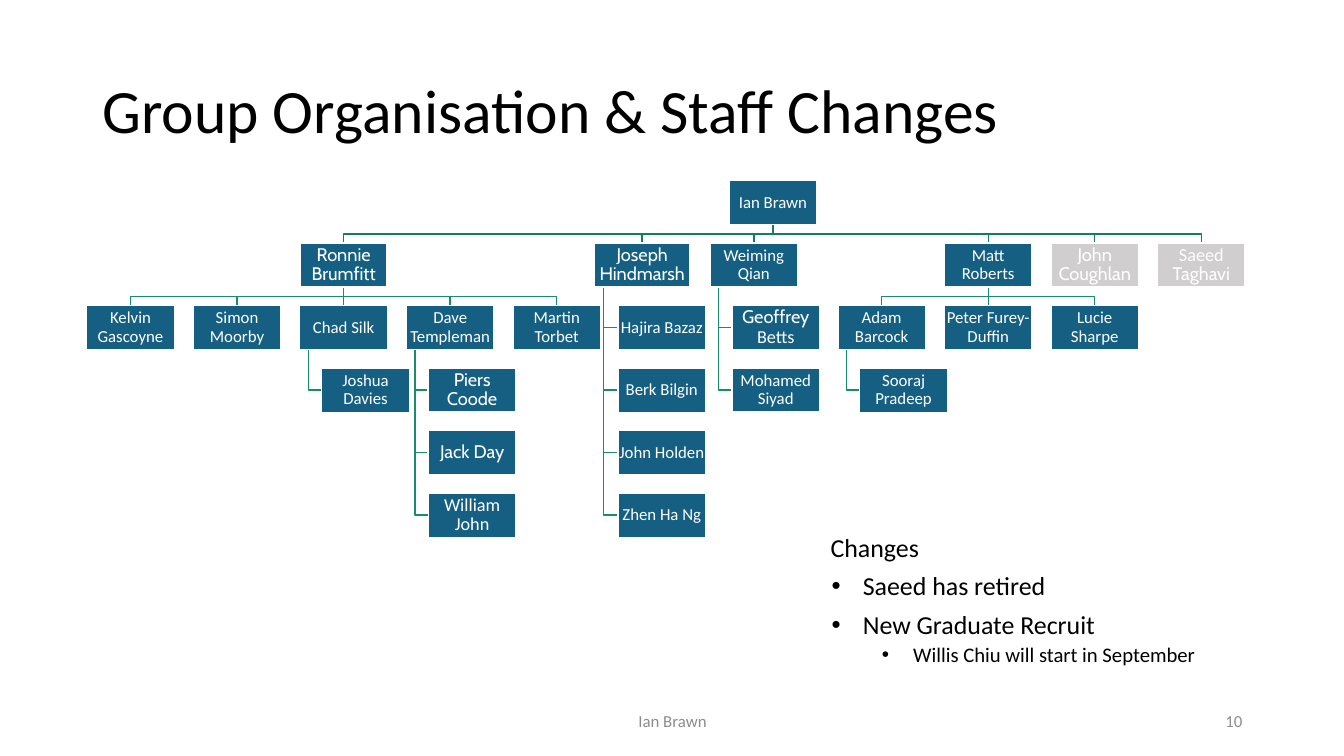
from dataclasses import dataclass, field
from typing import Iterator

from lxml.etree import SubElement
from pptx import Presentation
from pptx.dml.color import RGBColor as Rgb
from pptx.enum.shapes import MSO_CONNECTOR as Connector, MSO_SHAPE as Shape
from pptx.enum.text import MSO_ANCHOR as Anchor, PP_ALIGN as Align
from pptx.oxml.ns import qn
from pptx.util import Inches, Pt


@dataclass(frozen=True)
class Theme:
    main_face: str = "Calibri"
    accent_face: str = "Cabin"
    ink: str = "000000"
    muted: str = "8C8C8C"
    white: str = "FFFFFF"
    staff: str = "156082"
    leaver: str = "D0CECE"
    top_link: str = "177B60"
    team_link: str = "1A8C6D"
    title: float = 44
    name: float = 12
    large_name: float = 13
    change: float = 18.5
    detail: float = 14.8
    footer: float = 12
    link_width: float = 1
    thin: float = 1
    thick: float = 1.5


THEME = Theme()
SLIDE_W, SLIDE_H = 13.33, 7.5

# Chart grid: leftmost and rightmost boxes fix the column pitch
LEFT, TOP = 0.86, 1.79
COLUMN = (11.48 - LEFT) / 10.05
ROW = 0.62
BOX_W, BOX_H = 0.87, 0.44
SPINE, INDENT = 0.1, 0.25  # shares of the manager's box width


@dataclass
class Person:
    name: str
    column: float = 0
    reports: list["Person"] = field(default_factory=list)
    hanging: bool = False
    accent: str = ""  # part of the name in the accent face
    size: float = THEME.name
    edge: float = THEME.thin
    fill: str = THEME.staff
    width: float = 1  # in box widths
    row: int = 0

    @property
    def left(self) -> float:
        return LEFT + self.column * COLUMN

    @property
    def box_width(self) -> float:
        return self.width * BOX_W

    @property
    def centre(self) -> float:
        return self.left + self.box_width / 2

    @property
    def top(self) -> float:
        return TOP + self.row * ROW

    def place_reports(self) -> None:
        for step, report in enumerate(self.reports):
            report.row = self.row + 1 + (step if self.hanging else 0)
            if self.hanging:
                report.column = self.column + INDENT * self.box_width / COLUMN
            report.place_reports()

    def everyone(self) -> Iterator["Person"]:
        yield self
        for report in self.reports:
            yield from report.everyone()


@dataclass(frozen=True)
class Area:
    """Left, top, width and height in percent of the slide."""
    left: float
    top: float
    width: float
    height: float


@dataclass(frozen=True)
class Label:
    text: str
    area: Area
    size: float
    colour: str
    align: Align
    spacing: float = 1


@dataclass(frozen=True)
class Change:
    text: str
    margin: float
    size: float = THEME.change
    before: float = 10
    level: int = 0
    bullet: bool = True


def accented(name: str, accent: str = "", **options) -> Person:
    return Person(name, accent=accent or name, size=THEME.large_name,
                  edge=THEME.thick, **options)


CHIEF = Person("Ian Brawn", 6.03, [
    accented("Ronnie Brumfitt", column=2, reports=[
        Person("Kelvin Gascoyne", 0),
        Person("Simon Moorby", 1),
        Person("Chad Silk", 2, [Person("Joshua Davies")], hanging=True),
        Person("Dave Templeman", 3, [
            accented("Piers Coode"),
            accented("Jack Day"),
            Person("William John", size=THEME.large_name),
        ], hanging=True),
        Person("Martin Torbet", 4),
    ]),
    accented("Joseph Hindmarsh", column=4.76, width=1.1, hanging=True, reports=[
        Person("Hajira Bazaz"), Person("Berk Bilgin"),
        Person("John Holden"), Person("Zhen Ha Ng"),
    ]),
    Person("Weiming Qian", 5.85, [
        accented("Geoffrey Betts", "Geoffrey"),
        Person("Mohamed Siyad", edge=THEME.thick),
    ], hanging=True, edge=THEME.thick),
    Person("Matt Roberts", 8.05, [
        Person("Adam Barcock", 7.05, [Person("Sooraj Pradeep")], hanging=True),
        Person("Peter Furey-Duffin", 8.05),
        Person("Lucie Sharpe", 9.05),
    ], edge=THEME.thick),
    accented("John Coughlan", column=9.05, fill=THEME.leaver),
    accented("Saeed Taghavi", "Taghavi", column=10.05, fill=THEME.leaver),
])

LABELS = [
    Label("Group Organisation & Staff Changes", Area(6.9, 5.33, 86.27, 19.33),
          THEME.title, THEME.ink, Align.LEFT, 0.9),
    Label("Ian Brawn", Area(33.16, 92.67, 33.76, 5.33),
          THEME.footer, THEME.muted, Align.CENTER),
    Label("10", Area(70.67, 92.67, 22.51, 5.33),
          THEME.footer, THEME.muted, Align.RIGHT),
]

CHANGES_AREA = Area(60.46, 70.4, 39.53, 19.07)
CHANGES = [
    Change("Changes", 0.08, before=0, bullet=False),
    Change("Saeed has retired", 0.4),
    Change("New Graduate Recruit", 0.4),
    Change("Willis Chiu will start in September", 0.9, THEME.detail, 5, level=1),
]


def style(run, size: float, colour: str, face: str = THEME.main_face) -> None:
    run.font.size, run.font.name = Pt(size), face
    run.font.color.rgb = Rgb.from_string(colour)


def add_frame(slide, area: Area):
    frame = slide.shapes.add_textbox(
        Inches(area.left * SLIDE_W / 100), Inches(area.top * SLIDE_H / 100),
        Inches(area.width * SLIDE_W / 100), Inches(area.height * SLIDE_H / 100)).text_frame
    frame.word_wrap = True
    return frame


def draw_label(slide, label: Label) -> None:
    frame = add_frame(slide, label.area)
    frame.text, frame.vertical_anchor = label.text, Anchor.MIDDLE
    line = frame.paragraphs[0]
    line.alignment, line.line_spacing = label.align, label.spacing
    style(line.runs[0], label.size, label.colour)


def draw_link(slide, manager: Person, report: Person) -> None:
    start = manager.top + BOX_H
    if manager.hanging:
        spine = manager.left + SPINE * manager.box_width
        level = report.top + BOX_H / 2
        route = [(spine, start), (spine, level), (report.left, level)]
    elif manager.column == report.column:
        route = [(manager.centre, start), (report.centre, report.top)]
    else:
        middle = (start + report.top) / 2
        route = [(manager.centre, start), (manager.centre, middle),
                 (report.centre, middle), (report.centre, report.top)]
    points = [(Inches(x), Inches(y)) for x, y in route]
    if len(points) == 2:
        link = slide.shapes.add_connector(Connector.STRAIGHT, *points[0], *points[1])
        SubElement(link._element.spPr, qn("a:effectLst"))
    else:
        builder = slide.shapes.build_freeform(*points[0])
        builder.add_line_segments(points[1:], close=False)
        link = builder.convert_to_shape()
        link.fill.background()
        link.shadow.inherit = False
    link.line.color.rgb = Rgb.from_string(THEME.team_link if manager.row else THEME.top_link)
    link.line.width = Pt(THEME.link_width)


def draw_person(slide, person: Person) -> None:
    box = slide.shapes.add_shape(Shape.RECTANGLE, Inches(person.left), Inches(person.top),
                                 Inches(person.box_width), Inches(BOX_H))
    box.shadow.inherit = False
    box.fill.solid()
    box.fill.fore_color.rgb = Rgb.from_string(person.fill)
    box.line.color.rgb = Rgb.from_string(THEME.white)
    box.line.width = Pt(person.edge)
    frame = box.text_frame
    frame.word_wrap, frame.vertical_anchor = True, Anchor.MIDDLE
    frame.margin_left = frame.margin_right = Inches(0.01)
    frame.margin_top = frame.margin_bottom = Inches(0.01)
    line = frame.paragraphs[0]
    line.alignment, line.line_spacing = Align.CENTER, 0.9
    before, accent, after = person.name.partition(person.accent) if person.accent else (
        person.name, "", "")
    for part in filter(None, (before, accent, after)):
        run = line.add_run()
        run.text = part
        style(run, person.size, THEME.white,
              THEME.accent_face if part == accent else THEME.main_face)


def draw_changes(slide) -> None:
    frame = add_frame(slide, CHANGES_AREA)
    frame.text = "\n".join(change.text for change in CHANGES)
    for line, change in zip(frame.paragraphs, CHANGES):
        line.level, line.line_spacing = change.level, 0.8
        line.space_before = Pt(change.before)
        properties = line._p.get_or_add_pPr()
        properties.set("marL", str(Inches(change.margin)))
        if change.bullet:
            properties.set("indent", str(Inches(-0.31)))
            SubElement(properties, qn("a:buFont"), typeface="Arial")
            SubElement(properties, qn("a:buChar"), char="•")
        style(line.runs[0], change.size, THEME.ink)


def main() -> None:
    deck = Presentation()
    deck.slide_width, deck.slide_height = Inches(SLIDE_W), Inches(SLIDE_H)
    slide = deck.slides.add_slide(deck.slide_layouts[6])

    # Organisation chart: links lie behind the boxes
    CHIEF.place_reports()
    for manager in CHIEF.everyone():
        for report in manager.reports:
            draw_link(slide, manager, report)
    for person in CHIEF.everyone():
        draw_person(slide, person)

    # Title, footer and list of changes
    for label in LABELS:
        draw_label(slide, label)
    draw_changes(slide)
    deck.save("out.pptx")


if __name__ == "__main__":
    main()
